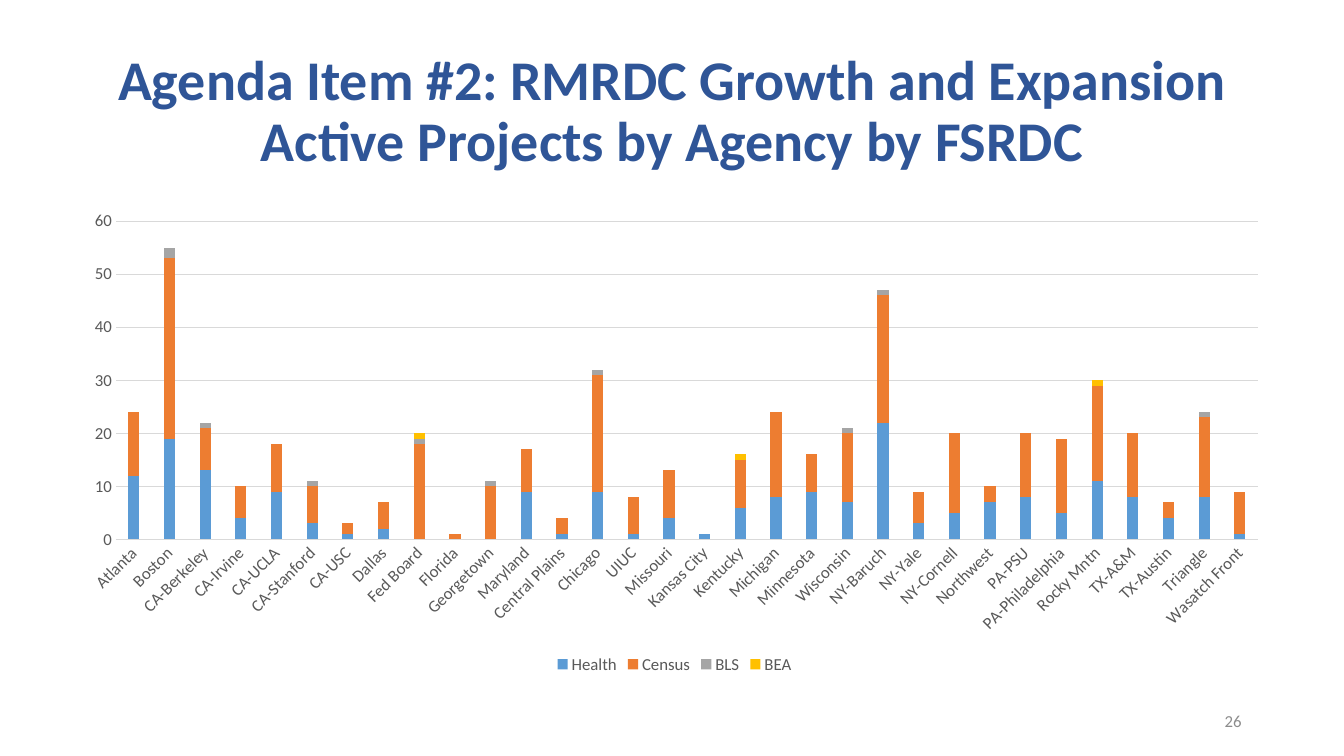
"""Build the slide of active projects by agency for each FSRDC."""
from pptx import Presentation
from pptx.chart.data import CategoryChartData
from pptx.dml.color import RGBColor
from pptx.enum.chart import XL_CHART_TYPE as CT, XL_LEGEND_POSITION as LP, XL_TICK_MARK as TM
from pptx.enum.text import MSO_ANCHOR, PP_ALIGN
from pptx.util import Pt

PX = 9525
FONT = "Calibri"
NAVY = RGBColor(0x2F, 0x55, 0x97)
TEXT_GREY = RGBColor(0x59, 0x59, 0x59)
NUMBER_GREY = RGBColor(0x8C, 0x8C, 0x8C)
GRID_GREY = RGBColor(0xD9, 0xD9, 0xD9)
BLUE = RGBColor(0x5B, 0x9B, 0xD5)
ORANGE = RGBColor(0xED, 0x7D, 0x31)
SILVER = RGBColor(0xA5, 0xA5, 0xA5)
GOLD = RGBColor(0xFF, 0xC0, 0x00)

AGENCIES = [("Health", BLUE), ("Census", ORANGE), ("BLS", SILVER), ("BEA", GOLD)]
PROJECTS = [
    ("Atlanta", 12, 12, None, None),
    ("Boston", 19, 34, 2, None),
    ("CA-Berkeley", 13, 8, 1, None),
    ("CA-Irvine", 4, 6, None, None),
    ("CA-UCLA", 9, 9, None, None),
    ("CA-Stanford", 3, 7, 1, None),
    ("CA-USC", 1, 2, None, None),
    ("Dallas", 2, 5, None, None),
    ("Fed Board", None, 18, 1, 1),
    ("Florida", None, 1, None, None),
    ("Georgetown", None, 10, 1, None),
    ("Maryland", 9, 8, None, None),
    ("Central Plains", 1, 3, None, None),
    ("Chicago", 9, 22, 1, None),
    ("UIUC", 1, 7, None, None),
    ("Missouri", 4, 9, None, None),
    ("Kansas City", 1, None, None, None),
    ("Kentucky", 6, 9, None, 1),
    ("Michigan", 8, 16, None, None),
    ("Minnesota", 9, 7, None, None),
    ("Wisconsin", 7, 13, 1, None),
    ("NY-Baruch", 22, 24, 1, None),
    ("NY-Yale", 3, 6, None, None),
    ("NY-Cornell", 5, 15, None, None),
    ("Northwest", 7, 3, None, None),
    ("PA-PSU", 8, 12, None, None),
    ("PA-Philadelphia", 5, 14, None, None),
    ("Rocky Mntn", 11, 18, None, 1),
    ("TX-A&M", 8, 12, None, None),
    ("TX-Austin", 4, 3, None, None),
    ("Triangle", 8, 15, 1, None),
    ("Wasatch Front", 1, 8, None, None),
]

prs = Presentation()
prs.slide_width, prs.slide_height = 1280 * PX, 720 * PX
s = prs.slides.add_slide(prs.slide_layouts[6])


def add_text(text, x, y, w, h, size, color, align, bold=False, spacing=1.0):
    tf = s.shapes.add_textbox(x * PX, y * PX, w * PX, h * PX).text_frame
    tf.word_wrap = True
    tf.vertical_anchor = MSO_ANCHOR.MIDDLE
    p = tf.paragraphs[0]
    p.text = text
    p.alignment, p.line_spacing = align, spacing
    for r in p.runs:
        r.font.name, r.font.size, r.font.bold = FONT, Pt(size), bold
        r.font.color.rgb = color


def format_font(font):
    font.name, font.size, font.bold = FONT, Pt(12), False
    font.color.rgb = TEXT_GREY


add_text("Agenda Item #2: RMRDC Growth and Expansion\vActive Projects by Agency by FSRDC",
         88, 38, 1104, 139, size=40, color=NAVY, align=PP_ALIGN.CENTER, bold=True, spacing=0.9)

centers, *counts = zip(*PROJECTS)
data = CategoryChartData()
data.categories = centers
for (agency, color), values in zip(AGENCIES, counts):
    data.add_series(agency, values)
chart = s.shapes.add_chart(CT.COLUMN_STACKED, 64 * PX, 192 * PX, 1157 * PX, 454 * PX, data).chart
chart.has_title = False
format_font(chart.font)

plot = chart.plots[0]
plot.gap_width, plot.overlap = 219, 100
plot.vary_by_categories = False
for series, (agency, color) in zip(plot.series, AGENCIES):
    series.format.fill.solid()
    series.format.fill.fore_color.rgb = color
    series.invert_if_negative = False

cat_axis, val_axis = chart.category_axis, chart.value_axis
for axis in (cat_axis, val_axis):
    axis.major_tick_mark = axis.minor_tick_mark = TM.NONE
    format_font(axis.tick_labels.font)
cat_axis.tick_labels.font._element.getparent().getparent().getparent().bodyPr.set("rot", "-2700000")
val_axis.minimum_scale, val_axis.maximum_scale, val_axis.major_unit = 0, 60, 10
val_axis.format.line.fill.background()
val_axis.has_major_gridlines = True
for line in (cat_axis.format.line, val_axis.major_gridlines.format.line):
    line.color.rgb = GRID_GREY
    line.width = Pt(0.75)

chart.has_legend = True
chart.legend.position = LP.BOTTOM
chart.legend.include_in_layout = False
format_font(chart.legend.font)

add_text("26", 904, 667, 288, 38, size=12, color=NUMBER_GREY, align=PP_ALIGN.RIGHT)

prs.save("out.pptx")
